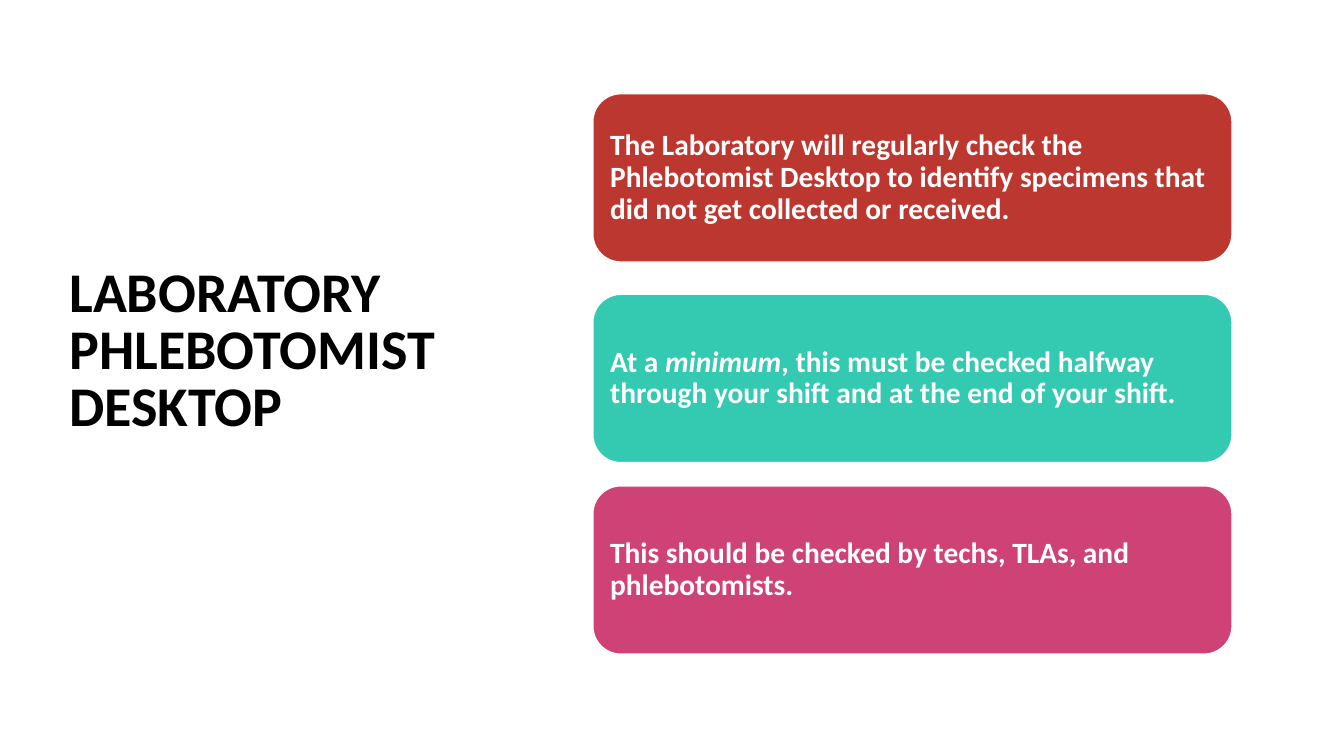
from dataclasses import dataclass

from pptx import Presentation
from pptx.dml.color import RGBColor
from pptx.enum.shapes import MSO_SHAPE as Shape
from pptx.enum.text import MSO_ANCHOR as Anchor, PP_ALIGN as Align
from pptx.util import Inches, Pt


@dataclass(frozen=True)
class Theme:
    font: str = "Calibri"
    title_size: int = 40
    card_size: int = 21
    ink: str = "000000"
    paper: str = "FFFFFF"
    red: str = "BC3730"
    teal: str = "34CAB2"
    pink: str = "CE4275"


theme = Theme()


def format_runs(paragraph, size, color, line_spacing):
    paragraph.alignment = Align.LEFT
    paragraph.line_spacing = line_spacing
    for run in paragraph.runs:
        run.font.name = theme.font
        run.font.size = Pt(size)
        run.font.bold = True
        run.font.color.rgb = RGBColor.from_string(color)


presentation = Presentation()
presentation.slide_width = Inches(13.33)
presentation.slide_height = Inches(7.5)
slide = presentation.slides.add_slide(presentation.slide_layouts[6])

# Title in the left column
title = slide.shapes.add_textbox(Inches(0.59), Inches(2.6), Inches(4.85), Inches(2.56))
title.text_frame.word_wrap = True
title.text_frame.text = "LABORATORY PHLEBOTOMIST DESKTOP"
format_runs(title.text_frame.paragraphs[0], theme.title_size, theme.ink, 0.85)

# Cards in the right column: top, fill, text parts (every second part is italic)
card_left, card_width, card_height = Inches(5.88), Inches(6.34), Inches(1.67)
cards = [
    (0.93, theme.red, [
        "The Laboratory will regularly check the Phlebotomist Desktop "
        "to identify specimens that did not get collected or received."]),
    (2.92, theme.teal, [
        "At a ", "minimum",
        ", this must be checked halfway through your shift and at the end of your shift."]),
    (4.82, theme.pink, [
        "This should be checked by techs, TLAs, and phlebotomists."]),
]

for top, fill, parts in cards:
    card = slide.shapes.add_shape(
        Shape.ROUNDED_RECTANGLE, card_left, Inches(top), card_width, card_height)
    card.shadow.inherit = False
    card.fill.solid()
    card.fill.fore_color.rgb = RGBColor.from_string(fill)
    card.line.color.rgb = RGBColor.from_string(theme.paper)
    card.line.width = Pt(1)

    frame = card.text_frame
    frame.word_wrap = True
    frame.vertical_anchor = Anchor.MIDDLE
    frame.margin_left = frame.margin_right = Inches(0.09)
    frame.margin_top = frame.margin_bottom = Inches(0.09)
    paragraph = frame.paragraphs[0]
    for index, part in enumerate(parts):
        run = paragraph.add_run()
        run.text = part
        run.font.italic = index % 2 == 1
    format_runs(paragraph, theme.card_size, theme.paper, 0.9)

presentation.save("out.pptx")
